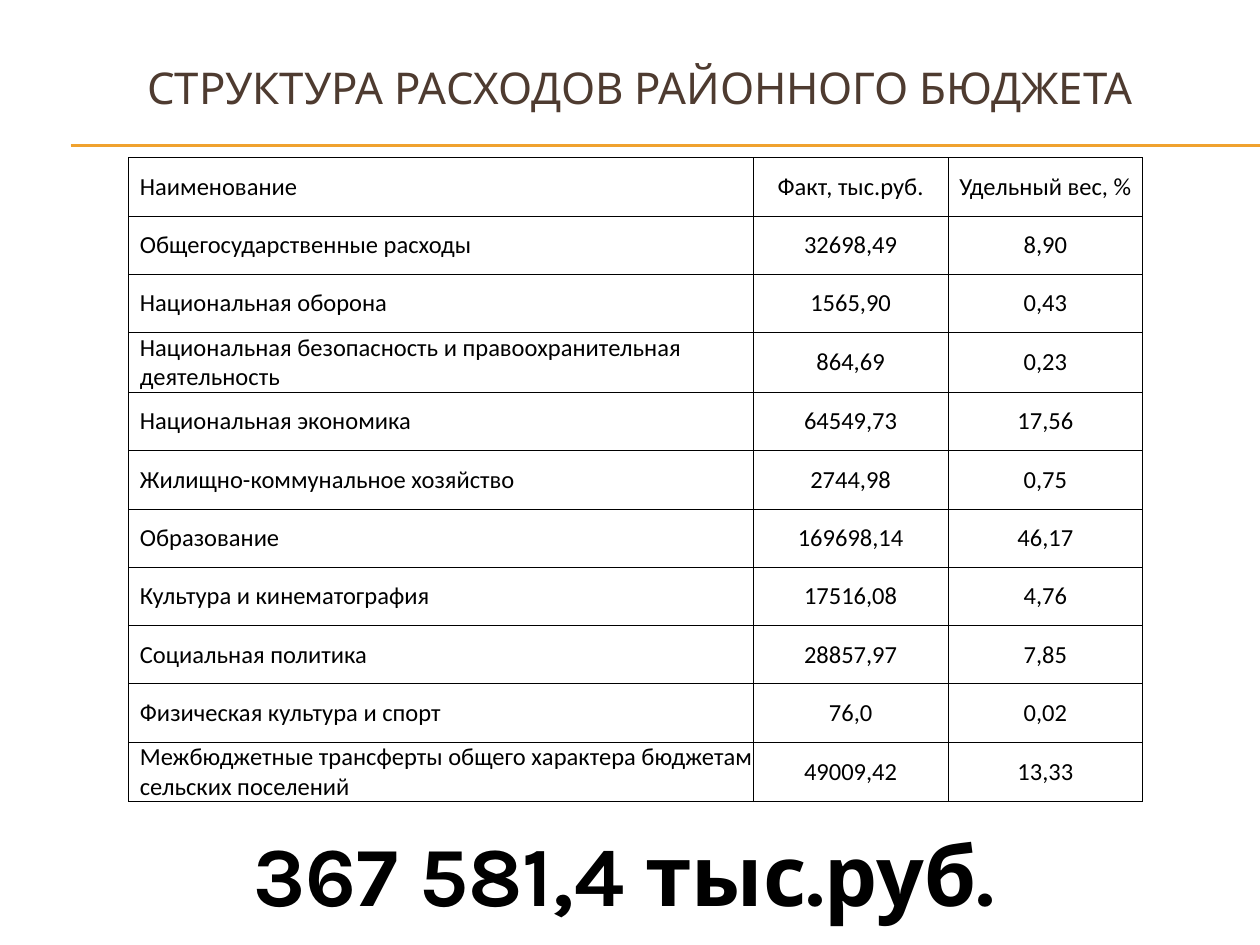
from dataclasses import dataclass
from typing import NamedTuple

from lxml import etree
from pptx import Presentation
from pptx.dml.color import RGBColor
from pptx.enum.shapes import MSO_CONNECTOR
from pptx.enum.text import MSO_ANCHOR, MSO_AUTO_SIZE, PP_ALIGN
from pptx.oxml.ns import qn
from pptx.util import Emu, Inches, Pt

STRAIGHT = MSO_CONNECTOR.STRAIGHT
MIDDLE, TOP = MSO_ANCHOR.MIDDLE, MSO_ANCHOR.TOP
LEFT, CENTER = PP_ALIGN.LEFT, PP_ALIGN.CENTER
NO_FIT = MSO_AUTO_SIZE.NONE
TITLE_ONLY = 5
W, H = Inches(10), Inches(7.5)


class Style(NamedTuple):
    font: str
    size: float
    color: str
    bold: bool = False


@dataclass(frozen=True)
class Theme:
    title: Style = Style("Karla", 25, "4E3B30")
    cell: Style = Style("Calibri", 14, "000000")
    total: Style = Style("Karla", 48, "000000", True)
    rule: str = "F0A22E"
    rule_width: float = 0.75
    border: str = "000000"
    border_width: float = 0.5


class Box(NamedTuple):
    x: float
    y: float
    w: float
    h: float

    def emu(self) -> tuple:
        return tuple(Emu(round(v * side)) for v, side in zip(self, (W, H, W, H)))


class Expense(NamedTuple):
    name: str
    fact: str
    share: str


THEME = Theme()
TITLE_BOX = Box(0.033, 0.031, 0.95, 0.123)
TABLE_BOX = Box(0.102, 0.167, 0.805, 0.679)
TOTAL_BOX = Box(0.328, 0.864, 0.297, 0.104)
COLUMN_SHARES = (0.616, 0.192, 0.192)
RULES_Y = (1.15, 1.16)
ROWS = (
    Expense("Наименование", "Факт, тыс.руб.", "Удельный вес, %"),
    Expense("Общегосударственные расходы", "32698,49", "8,90"),
    Expense("Национальная оборона", "1565,90", "0,43"),
    Expense("Национальная безопасность и правоохранительная деятельность", "864,69", "0,23"),
    Expense("Национальная экономика", "64549,73", "17,56"),
    Expense("Жилищно-коммунальное хозяйство", "2744,98", "0,75"),
    Expense("Образование", "169698,14", "46,17"),
    Expense("Культура и кинематография", "17516,08", "4,76"),
    Expense("Социальная политика", "28857,97", "7,85"),
    Expense("Физическая культура и спорт", "76,0", "0,02"),
    Expense("Межбюджетные трансферты общего характера бюджетам сельских поселений", "49009,42", "13,33"),
)


def apply(obj, **values) -> None:
    for name, value in values.items():
        setattr(obj, name, value)


def write(tf, text: str, style: Style, align=CENTER):
    p = tf.paragraphs[0]
    p.alignment = align
    r = p.add_run()
    r.text = text
    apply(r.font, name=style.font, size=Pt(style.size), bold=style.bold)
    r.font.color.rgb = RGBColor.from_string(style.color)
    return p


def add_rule(slide, y: float) -> None:
    line = slide.shapes.add_connector(STRAIGHT, Inches(0.56), Inches(y), W, Inches(y))
    line.line.color.rgb = RGBColor.from_string(THEME.rule)
    line.line.width = Pt(THEME.rule_width)
    etree.SubElement(line._element.spPr, qn("a:effectLst"))


def add_title(slide, text: str) -> None:
    sp = slide.shapes.title
    apply(sp, **dict(zip(("left", "top", "width", "height"), TITLE_BOX.emu())))
    apply(sp.text_frame, word_wrap=True, auto_size=NO_FIT, vertical_anchor=MIDDLE)
    write(sp.text_frame, text, THEME.title)


def add_borders(cell) -> None:
    tcPr = cell._tc.get_or_add_tcPr()
    for i, side in enumerate(("lnL", "lnR", "lnT", "lnB")):
        ln = etree.Element(qn(f"a:{side}"), w=str(Pt(THEME.border_width)))
        fill = etree.SubElement(ln, qn("a:solidFill"))
        etree.SubElement(fill, qn("a:srgbClr"), val=THEME.border)
        tcPr.insert(i, ln)


def fill_cell(cell, text: str, is_name: bool) -> None:
    apply(cell, margin_left=0, margin_right=0, margin_top=0, margin_bottom=0,
          vertical_anchor=MIDDLE)
    cell.fill.background()
    add_borders(cell)
    p = write(cell.text_frame, text, THEME.cell, LEFT if is_name else CENTER)
    if is_name:
        p._p.get_or_add_pPr().set("marL", str(Inches(0.09)))


def add_expenses(slide) -> None:
    x, y, w, h = TABLE_BOX.emu()
    table = slide.shapes.add_table(len(ROWS), len(COLUMN_SHARES), x, y, w, h).table
    apply(table, first_row=False, horz_banding=False)
    for column, share in zip(table.columns, COLUMN_SHARES):
        column.width = Emu(round(w * share))
    for row, expense in zip(table.rows, ROWS):
        row.height = Emu(h // len(ROWS))
        for i, (cell, text) in enumerate(zip(row.cells, expense)):
            fill_cell(cell, text, i == 0)


def add_total(slide, text: str) -> None:
    sp = slide.shapes.add_textbox(*TOTAL_BOX.emu())
    apply(sp.text_frame, word_wrap=False, auto_size=NO_FIT, vertical_anchor=TOP,
          margin_left=Inches(0.48))
    write(sp.text_frame, text, THEME.total)


def main() -> None:
    prs = Presentation()
    apply(prs, slide_width=W, slide_height=H)
    slide = prs.slides.add_slide(prs.slide_layouts[TITLE_ONLY])
    for y in RULES_Y:
        add_rule(slide, y)
    add_title(slide, "СТРУКТУРА РАСХОДОВ РАЙОННОГО БЮДЖЕТА")
    add_expenses(slide)
    add_total(slide, "367 581,4 тыс.руб.")
    prs.save("out.pptx")


if __name__ == "__main__":
    main()
